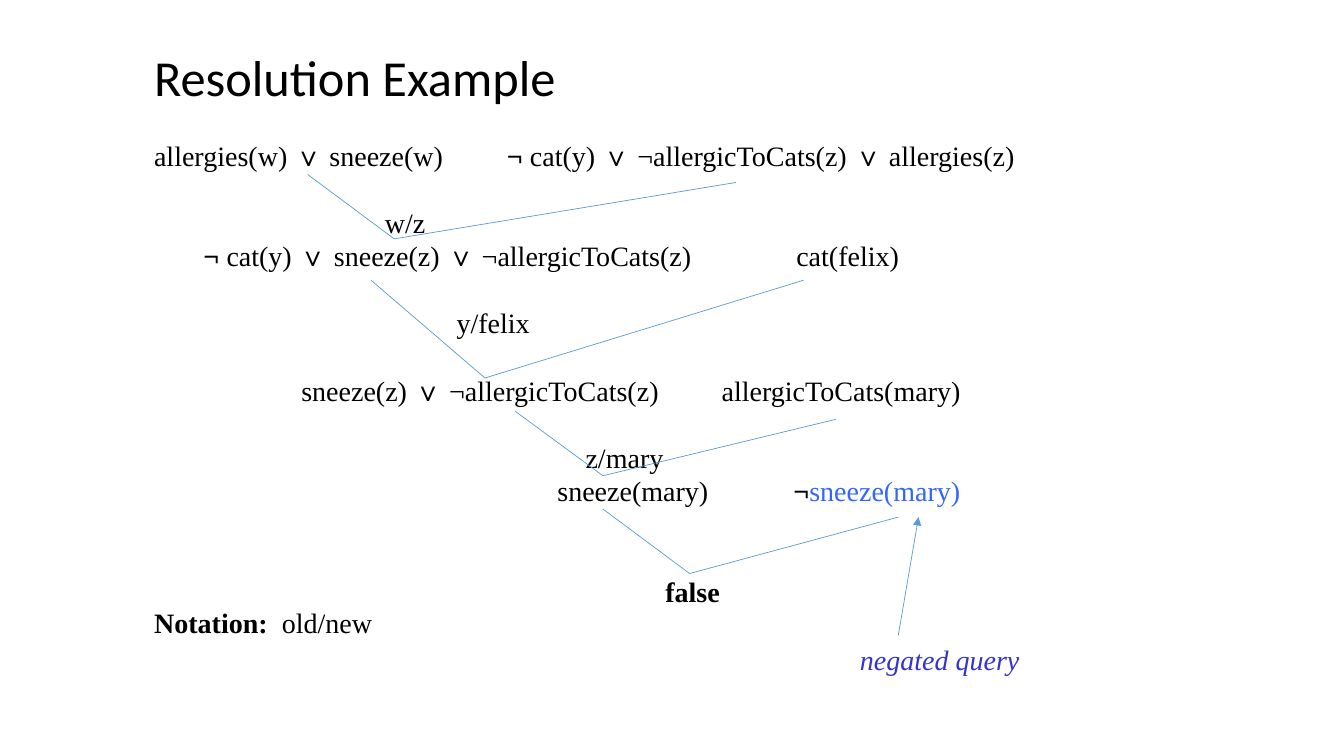
from pptx import Presentation
from pptx.dml.color import RGBColor
from pptx.enum import shapes
from pptx.oxml import ns
from pptx.util import Inches, Pt
from lxml import etree

COLORS = {"text": "000000", "line": "5B9BD5", "query": "3365FF", "note": "3333CD"}
FIRST_ROW_TOP = 1.32
ROW_HEIGHT = 1 / 3


class ProofSlide:
    def __init__(self, presentation):
        self.slide = presentation.slides.add_slide(presentation.slide_layouts[6])
        self.font = "Times New Roman"
        self.size = 20

    def text(self, left, top, width, runs, font=None, size=None, height=0.44):
        """Add a text box; each run is (words, style letters, colour name)."""
        box = self.slide.shapes.add_textbox(
            Inches(left), Inches(top), Inches(width), Inches(height))
        frame = box.text_frame
        frame.word_wrap = True
        paragraph = frame.paragraphs[0]
        for words, style, color in runs:
            run = paragraph.add_run()
            run.text = words
            run.font.name = font or self.font
            run.font.size = Pt(size or self.size)
            run.font.bold = "b" in style
            run.font.italic = "i" in style
            run.font.color.rgb = RGBColor.from_string(COLORS[color])

    def clause(self, row, left, width, *runs):
        self.text(left, FIRST_ROW_TOP + row * ROW_HEIGHT, width, runs)

    def line(self, start, end, arrow=False):
        connector = self.slide.shapes.add_connector(
            shapes.MSO_CONNECTOR.STRAIGHT, *map(Inches, start + end))
        connector.line.color.rgb = RGBColor.from_string(COLORS["line"])
        connector.line.width = Pt(0.5)
        if arrow:
            outline = connector.line._get_or_add_ln()
            etree.SubElement(outline, ns.qn("a:tailEnd"), type="triangle")
        etree.SubElement(connector._element.spPr, ns.qn("a:effectLst"))

    def resolution(self, left_parent, right_parent, result):
        """Join two parent clauses to the clause they resolve to."""
        for parent in (left_parent, right_parent):
            self.line(parent, result)


def plain(words):
    return words, "", "text"


def bold(words):
    return words, "b", "text"


def main():
    presentation = Presentation()
    presentation.slide_width = Inches(13.33)
    presentation.slide_height = Inches(7.5)
    proof = ProofSlide(presentation)

    proof.text(1.43, 0.41, 8.22, [plain("Resolution Example")],
               font="Calibri", size=36, height=0.71)

    clauses = [
        (0, 1.43, 3.3, plain("allergies(w) ∨ sneeze(w)")),
        (0, 4.93, 5.6, bold("¬ "), plain("cat(y) ∨ ¬allergicToCats(z) ∨ allergies(z)")),
        (2, 3.72, 0.8, plain("w/z")),
        (3, 1.92, 5.4, bold("¬ "), plain("cat(y) ∨ sneeze(z) ∨ ¬allergicToCats(z)")),
        (3, 7.8, 1.5, plain("cat(felix)")),
        (5, 4.43, 1.2, plain("y/felix")),
        (7, 2.89, 4.1, plain("sneeze(z) ∨ ¬allergicToCats(z)")),
        (7, 7.06, 2.9, plain("allergicToCats(mary)")),
        (9, 5.71, 1.2, plain("z/mary")),
        (10, 5.43, 2, plain("sneeze(mary)")),
        (10, 7.77, 2.2, bold("¬"), ("sneeze(mary)", "", "query")),
        (13, 6.5, 1, bold("false")),
        (15, 8.43, 2.1, ("negated query", "i", "note")),
    ]
    for clause in clauses:
        proof.clause(*clause)

    resolutions = [
        ((3.05, 1.73), (7.3, 1.81), (3.91, 2.37)),
        ((3.68, 2.78), (7.97, 2.78), (4.81, 3.75)),
        ((5.11, 4.08), (8.29, 4.16), (5.98, 4.72)),
        ((5.98, 5.05), (8.91, 5.13), (6.84, 5.69)),
    ]
    for resolution in resolutions:
        proof.resolution(*resolution)
    proof.line((8.91, 6.3), (9.11, 5.13), arrow=True)

    proof.text(1.43, 5.96, 2.6, [bold("Notation:  "), plain("old/new")])
    presentation.save("out.pptx")


if __name__ == "__main__":
    main()
